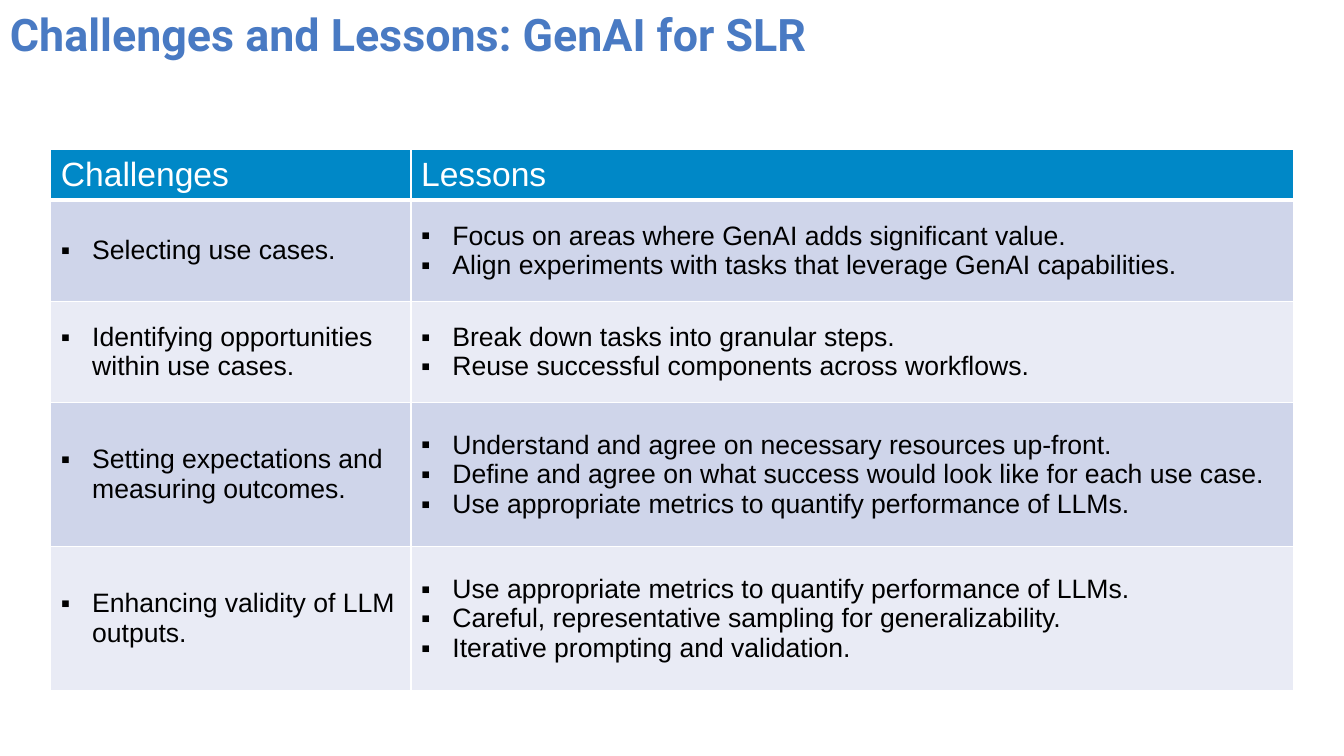
from lxml import etree
from pptx import Presentation
from pptx import util as u
from pptx.dml.color import RGBColor
from pptx.enum import text
from pptx.oxml.ns import qn

COLORS = {
    "title": "497AC3", "header": "0088C7", "odd": "CFD5EA",
    "even": "E9EBF5", "white": "FFFFFF", "black": "000000",
}
HEADINGS = ["Challenges", "Lessons"]
ROWS = [
    ("Selecting use cases.", [
        "Focus on areas where GenAI adds significant value.",
        "Align experiments with tasks that leverage GenAI capabilities."]),
    ("Identifying opportunities within use cases.", [
        "Break down tasks into granular steps.",
        "Reuse successful components across workflows."]),
    ("Setting expectations and measuring outcomes.", [
        "Understand and agree on necessary resources up-front.",
        "Define and agree on what success would look like for each use case.",
        "Use appropriate metrics to quantify performance of LLMs."]),
    ("Enhancing validity of LLM outputs.", [
        "Use appropriate metrics to quantify performance of LLMs.",
        "Careful, representative sampling for generalizability.",
        "Iterative prompting and validation."]),
]
HEADER_HEIGHT = 1.24
ROW_HEIGHTS = {2: 2.55, 3: 3.63}
CHALLENGE_SHARE = 0.29


def write(frame, lines, size, color, font="Arial", bold=False, bullet=None):
    """Fill a text frame with one formatted paragraph per line."""
    for index, line in enumerate(lines):
        paragraph = frame.paragraphs[0] if index == 0 else frame.add_paragraph()
        if bullet:
            properties = paragraph._p.get_or_add_pPr()
            properties.set("marL", str(u.Cm(0.79)))
            properties.set("indent", str(-u.Cm(0.79)))
            etree.SubElement(properties, qn("a:buFont")).set("typeface", "Arial")
            etree.SubElement(properties, qn("a:buChar")).set("char", bullet)
        run = paragraph.add_run()
        run.text = line
        run.font.name = font
        run.font.size = u.Pt(size)
        run.font.bold = bold
        run.font.color.rgb = RGBColor.from_string(COLORS[color])


def style_cell(cell, fill, bottom=1):
    """Give a cell its fill, white borders and middle anchor."""
    cell.vertical_anchor = text.MSO_ANCHOR.MIDDLE
    properties = cell._tc.get_or_add_tcPr()
    for side, width in {"L": 1, "R": 1, "T": 1, "B": bottom}.items():
        border = etree.SubElement(properties, qn(f"a:ln{side}"), w=str(u.Pt(width)))
        solid = etree.SubElement(border, qn("a:solidFill"))
        etree.SubElement(solid, qn("a:srgbClr"), val=COLORS["white"])
    cell.fill.solid()
    cell.fill.fore_color.rgb = RGBColor.from_string(COLORS[fill])


def add_title(slide, left, top, width, height):
    """Place the slide title in its box."""
    title = slide.shapes.add_textbox(*map(u.Cm, (left, top, width, height)))
    title.text_frame.word_wrap = False
    title.text_frame.auto_size = text.MSO_AUTO_SIZE.SHAPE_TO_FIT_TEXT
    write(title.text_frame, ["Challenges and Lessons: GenAI for SLR"], 32, "title",
          font="Roboto", bold=True)


def add_lessons_table(slide, left, top, width):
    """Place the table that pairs each challenge with its lessons."""
    heights = [HEADER_HEIGHT] + [ROW_HEIGHTS[max(2, len(lessons))] for _, lessons in ROWS]
    table = slide.shapes.add_table(
        len(heights), 2, *map(u.Cm, (left, top, width, sum(heights)))).table
    for column, share in zip(table.columns, (CHALLENGE_SHARE, 1 - CHALLENGE_SHARE)):
        column.width = u.Cm(width * share)
    for row, height in zip(table.rows, heights):
        row.height = u.Cm(height)
    for column, heading in enumerate(HEADINGS):
        cell = table.cell(0, column)
        style_cell(cell, "header", bottom=3)
        write(cell.text_frame, [heading], 24, "white")
    for row, (challenge, lessons) in enumerate(ROWS, 1):
        for column, lines in enumerate(([challenge], lessons)):
            cell = table.cell(row, column)
            style_cell(cell, "odd" if row % 2 else "even")
            write(cell.text_frame, lines, 19, "black", bullet="▪")


def main():
    """Build the slide and save it."""
    deck = Presentation()
    deck.slide_width, deck.slide_height = u.Cm(33.87), u.Cm(19.05)
    slide = deck.slides.add_slide(deck.slide_layouts[6])
    add_title(slide, 0, 0.05, 20.78, 1.63)
    add_lessons_table(slide, 1.28, 3.77, 31.31)
    deck.save("out.pptx")


if __name__ == "__main__":
    main()
